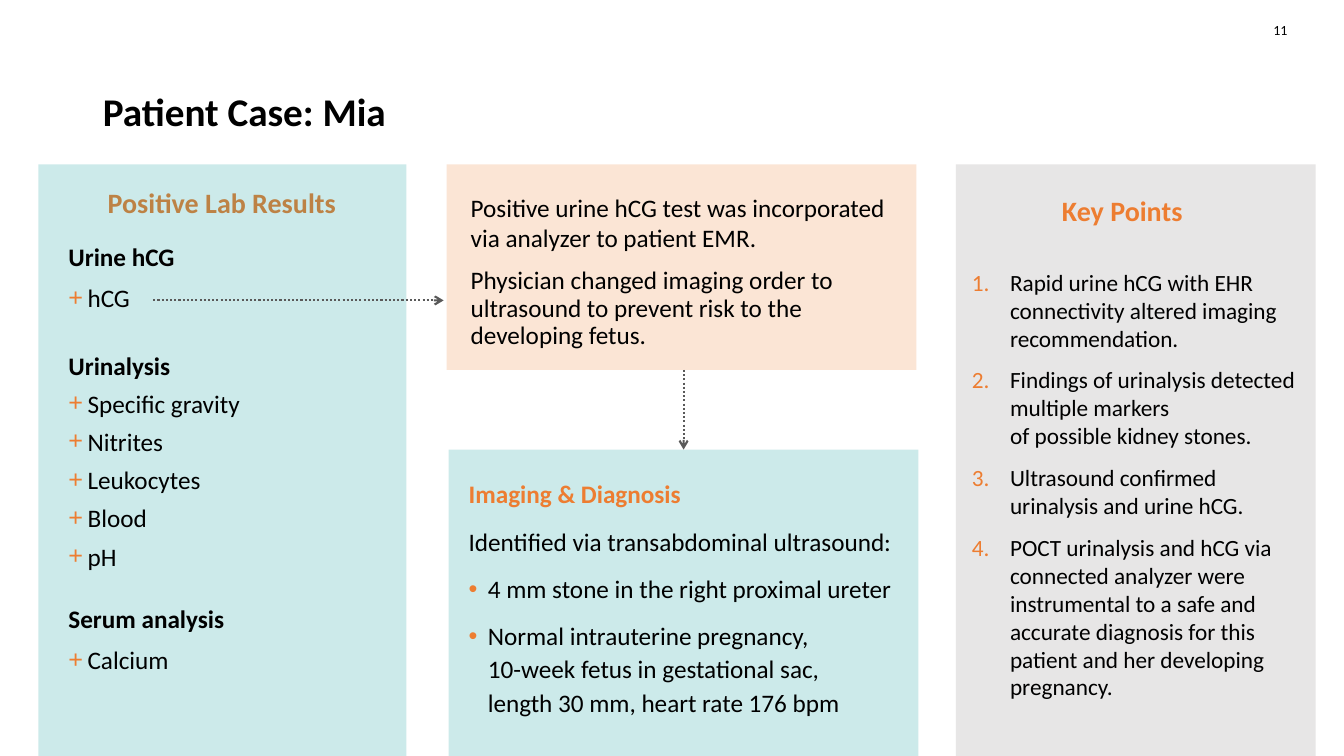
from dataclasses import dataclass

from lxml import etree
from pptx import Presentation
from pptx.dml.color import RGBColor
from pptx.enum.dml import MSO_LINE
from pptx.enum.shapes import MSO_CONNECTOR, MSO_SHAPE
from pptx.enum.text import MSO_ANCHOR, MSO_AUTO_SIZE, PP_ALIGN
from pptx.oxml.ns import qn
from pptx.util import Inches, Pt

STRAIGHT = MSO_CONNECTOR.STRAIGHT
DOTTED = MSO_LINE.ROUND_DOT
RECTANGLE = MSO_SHAPE.RECTANGLE
TOP, MIDDLE = MSO_ANCHOR.TOP, MSO_ANCHOR.MIDDLE
NO_AUTOFIT = MSO_AUTO_SIZE.NONE
LEFT, CENTER = PP_ALIGN.LEFT, PP_ALIGN.CENTER


@dataclass(frozen=True)
class Theme:
    font: str = "Calibri"
    bullet_font: str = "Arial"
    ink: str = "000000"
    accent: str = "ED7D31"
    teal: str = "009999"
    grey: str = "E7E6E6"
    arrow: str = "595959"
    title: float = 28
    heading: float = 20
    body: float = 18
    points: float = 16.6
    page: float = 10
    gap: float = 10


THEME = Theme()


@dataclass(frozen=True)
class Line:
    text: str
    size: float = THEME.body
    color: str = THEME.ink
    bold: bool = False
    bullet: str = ""
    indent: float = 0
    align: PP_ALIGN = LEFT


def bold_line(text):
    return Line(text, bold=True)


def heading_line(text):
    return Line(text, THEME.heading, THEME.accent, True, align=CENTER)


def bullet_lines(mark, texts):
    return [Line(text, bullet=mark, indent=0.19) for text in texts]


def numbered_lines(texts):
    return [Line(text, THEME.points, bullet="1.", indent=0.38) for text in texts]


def add_bullet(properties, line):
    if not line.bullet:
        etree.SubElement(properties, qn("a:buNone"))
        return
    color = etree.SubElement(properties, qn("a:buClr"))
    etree.SubElement(color, qn("a:srgbClr"), val=THEME.accent)
    if line.bullet == "1.":
        etree.SubElement(properties, qn("a:buFont"), typeface=THEME.font)
        etree.SubElement(properties, qn("a:buAutoNum"), type="arabicPeriod")
    else:
        etree.SubElement(properties, qn("a:buFont"), typeface=THEME.bullet_font)
        etree.SubElement(properties, qn("a:buChar"), char=line.bullet)


def add_run(paragraph, text, line):
    run = paragraph.add_run()
    run.text = text
    run.font.name = THEME.font
    run.font.size = Pt(line.size)
    run.font.bold = line.bold
    run.font.color.rgb = RGBColor.from_string(line.color)


def write_lines(shape, lines, spacing=1.0, anchor=TOP):
    frame = shape.text_frame
    frame.word_wrap = True
    frame.auto_size = NO_AUTOFIT
    frame.vertical_anchor = anchor
    for index, line in enumerate(lines):
        paragraph = frame.add_paragraph() if index else frame.paragraphs[0]
        properties = paragraph._p.get_or_add_pPr()
        properties.set("marL", str(Inches(line.indent)))
        properties.set("indent", str(-Inches(line.indent)))
        add_bullet(properties, line)
        paragraph.alignment = line.align
        paragraph.line_spacing = spacing
        paragraph.space_before = Pt(THEME.gap if index else 0)
        for row, text in enumerate(line.text.split("\n")):
            if row:
                paragraph.add_line_break()
            add_run(paragraph, text, line)


def place(shape, left, top, width, height):
    shape.left, shape.top = Inches(left), Inches(top)
    shape.width, shape.height = Inches(width), Inches(height)


def add_text(slide, box, lines, spacing=1.0, anchor=TOP):
    shape = slide.shapes.add_textbox(*map(Inches, box))
    write_lines(shape, lines, spacing, anchor)


def add_panel(slide, box, color, opacity=100):
    shape = slide.shapes.add_shape(RECTANGLE, *map(Inches, box))
    shape.shadow.inherit = False
    shape.line.fill.background()
    shape.fill.solid()
    shape.fill.fore_color.rgb = RGBColor.from_string(color)
    if opacity < 100:
        fill_color = shape._element.spPr.find(".//" + qn("a:srgbClr"))
        etree.SubElement(fill_color, qn("a:alpha"), val=str(opacity * 1000))


def add_arrow(slide, *ends):
    connector = slide.shapes.add_connector(STRAIGHT, *map(Inches, ends))
    connector.line.color.rgb = RGBColor.from_string(THEME.arrow)
    connector.line.width = Pt(1.5)
    connector.line.dash_style = DOTTED
    properties = connector._element.spPr
    etree.SubElement(properties.find(qn("a:ln")), qn("a:tailEnd"), type="arrow")
    etree.SubElement(properties, qn("a:effectLst"))


def add_panels(slide):
    add_panel(slide, (9.48, 1.63, 3.57, 5.87), THEME.grey)
    add_panel(slide, (4.45, 4.46, 4.66, 3.04), THEME.teal, 20)
    add_panel(slide, (4.43, 1.63, 4.66, 2.04), THEME.accent, 20)
    add_panel(slide, (0.38, 1.63, 3.65, 5.87), THEME.teal, 20)


def add_headings(slide):
    title, lab_heading = slide.placeholders[0], slide.placeholders[1]
    place(title, 0.92, 0.4, 11.5, 1.45)
    write_lines(title, [Line("Patient Case: Mia", THEME.title, bold=True)], 0.9, MIDDLE)
    place(lab_heading, 0.91, 1.83, 2.58, 0.49)
    write_lines(lab_heading, [heading_line("Positive Lab Results")], 0.9)
    add_text(slide, (9.84, 1.91, 2.58, 0.49), [heading_line("Key Points")], 0.9)
    add_text(slide, (12.38, 0.1, 0.64, 0.4),
             [Line("11", THEME.page, align=CENTER)], anchor=MIDDLE)


def add_lab_results(slide):
    groups = [
        ("Urine hCG", ["hCG"], 2.38, 0.9, 0.9),
        ("Urinalysis", ["Specific gravity", "Nitrites", "Leukocytes", "Blood", "pH"],
         3.48, 2.35, 0.8),
        ("Serum analysis", ["Calcium"], 5.97, 1.01, 0.9),
    ]
    for name, findings, top, height, spacing in groups:
        add_text(slide, (0.58, top, 2.28, height),
                 [bold_line(name)] + bullet_lines("+", findings), spacing)


def add_care_steps(slide):
    add_text(slide, (4.57, 1.86, 4.43, 0.71), [Line(
        "Positive urine hCG test was incorporated via analyzer to patient EMR.")])
    add_text(slide, (4.57, 2.61, 4.43, 1.07), [Line(
        "Physician changed imaging order to ultrasound to prevent risk to the "
        "developing fetus.")], 0.9)
    add_text(slide, (4.55, 4.67, 4.43, 2.6), [
        Line("Imaging & Diagnosis", color=THEME.accent, bold=True),
        Line("Identified via transabdominal ultrasound:"),
        *bullet_lines("•", [
            "4 mm stone in the right proximal ureter",
            "Normal intrauterine pregnancy,\n10-week fetus in gestational sac,\n"
            "length 30 mm, heart rate 176 bpm"]),
    ], 1.1)
    add_arrow(slide, 1.52, 2.98, 4.4, 2.98)
    add_arrow(slide, 6.78, 3.67, 6.78, 4.46)


def add_key_points(slide):
    add_text(slide, (9.54, 2.61, 3.44, 4.67), numbered_lines([
        "Rapid urine hCG with EHR connectivity altered imaging recommendation.",
        "Findings of urinalysis detected multiple markers\nof possible kidney stones.",
        "Ultrasound confirmed urinalysis and urine hCG.",
        "POCT urinalysis and hCG via connected analyzer were instrumental to a safe "
        "and accurate diagnosis for this patient and her developing pregnancy.",
    ]))


def main():
    presentation = Presentation()
    presentation.slide_width, presentation.slide_height = Inches(13.33), Inches(7.5)
    slide = presentation.slides.add_slide(presentation.slide_layouts[1])
    add_panels(slide)
    add_headings(slide)
    add_lab_results(slide)
    add_care_steps(slide)
    add_key_points(slide)
    presentation.save("out.pptx")


if __name__ == "__main__":
    main()
